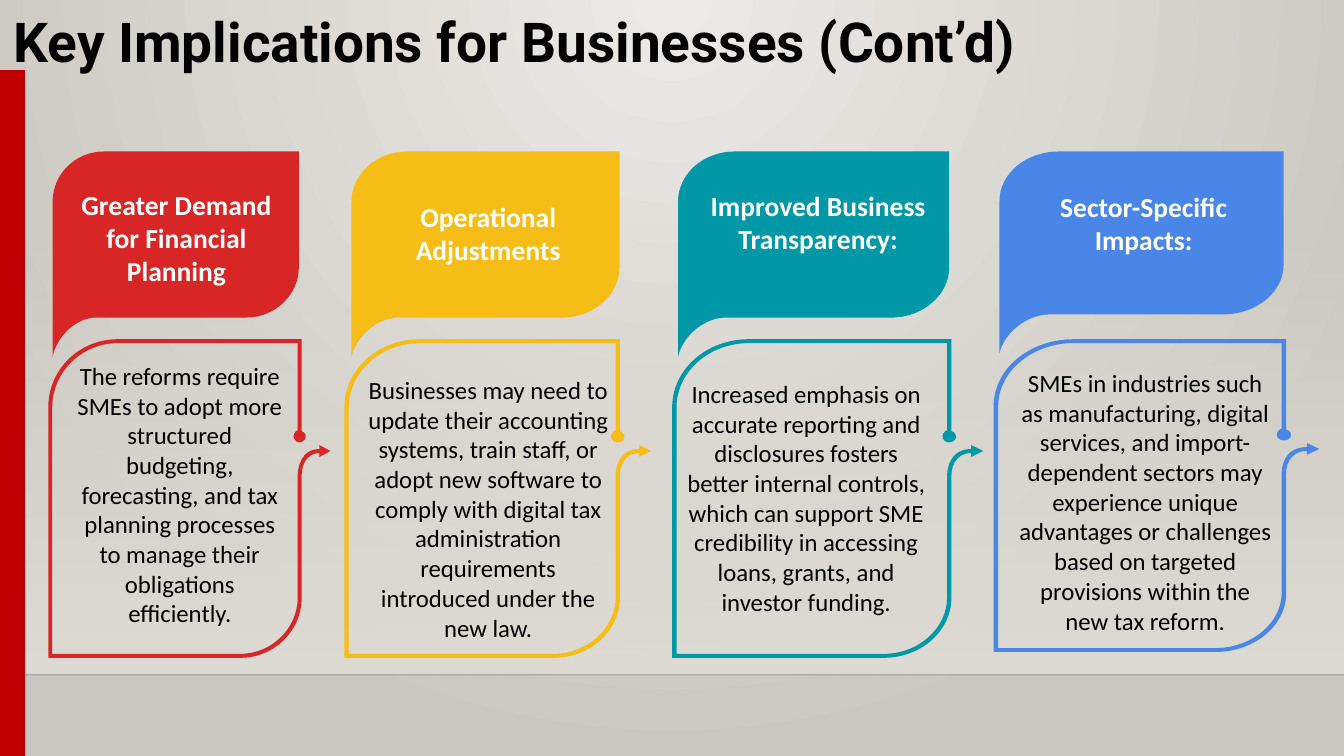
from dataclasses import dataclass
from typing import NamedTuple

from lxml.etree import Element, SubElement
from pptx import Presentation
from pptx.dml.color import RGBColor as Rgb
from pptx.enum.shapes import MSO_CONNECTOR as Connector, MSO_SHAPE as Preset
from pptx.enum.text import MSO_ANCHOR as Anchor, MSO_AUTO_SIZE as AutoSize, PP_ALIGN as Align
from pptx.oxml.ns import qn
from pptx.util import Cm, Pt


@dataclass(frozen=True)
class Theme:
    title_font: str = "Roboto"
    body_font: str = "Calibri"
    title_size: int = 40
    heading_size: int = 20
    body_size: int = 18
    ink: str = "000000"
    white: str = "FFFFFF"
    side_bar: str = "C00000"
    glow: str = "ECEAE7"
    edge: str = "CAC7C1"
    wall: str = "DFDBD5"
    red: str = "D82525"
    yellow: str = "F5BD16"
    teal: str = "0097A7"
    blue: str = "4A86E8"


class Box(NamedTuple):
    """Left, top, width and height in centimetres."""
    left: float
    top: float
    width: float
    height: float

    def lengths(self) -> list[int]:
        return [Cm(value) for value in self]


class TextStyle(NamedTuple):
    font: str
    size: int
    color: str
    bold: bool = False
    align: Align = Align.CENTER


@dataclass(frozen=True)
class Card:
    color: str
    badge: Box
    frame: Box
    heading_box: Box
    heading: str
    body_box: Box
    body: str


class Outline(NamedTuple):
    """Two numbers draw a line to a point, six draw a Bezier curve."""
    width: int
    height: int
    start: tuple[int, int]
    steps: list[tuple[int, ...]]


THEME = Theme()
SLIDE_WIDTH, SLIDE_HEIGHT = 34.49, 19.41
FLOOR_TOP = 17.32
BADGE_TOP, FRAME_TOP = 3.89, 8.71

TITLE = TextStyle(THEME.title_font, THEME.title_size, THEME.ink, True, Align.LEFT)
HEADING = TextStyle(THEME.body_font, THEME.heading_size, THEME.white, True)
BODY = TextStyle(THEME.body_font, THEME.body_size, THEME.ink)

BADGE = Outline(249, 208, (52, 0), [
    (23, 0, 0, 23, 0, 51), (0, 208), (4, 187, 24, 168, 44, 168),
    (196, 168), (225, 168, 249, 145, 249, 117), (249, 0),
])
FRAME = Outline(285, 322, (285, 113), [
    # Arrow and inner edge
    (274, 107), (274, 111), (268, 111, 263, 113, 259, 117),
    (254, 123, 252, 131, 252, 137), (252, 261),
    (252, 292, 226, 318, 194, 318), (4, 318), (4, 69),
    (4, 33, 34, 4, 70, 4), (252, 4), (252, 92),
    # Round end of the line
    (249, 93, 247, 97, 248, 100), (249, 103, 252, 105, 256, 104),
    (259, 103, 261, 100, 260, 97), (259, 95, 258, 93, 256, 93),
    # Outer edge, back to the arrow
    (256, 0), (70, 0), (32, 0, 0, 30, 0, 69), (0, 322), (194, 322),
    (228, 322, 256, 295, 256, 261), (256, 137),
    (256, 133, 257, 125, 262, 120), (265, 117, 269, 115, 274, 115), (274, 119),
])

CARDS = [
    Card(THEME.red, Box(1.35, BADGE_TOP, 6.32, 5.28), Box(1.24, FRAME_TOP, 7.24, 8.18),
         Box(1.37, 4.7, 6.32, 2.82), "Greater Demand for Financial Planning",
         Box(1.63, 9.14, 5.97, 7.19),
         "The reforms require SMEs to adopt more structured budgeting, forecasting, "
         "and tax planning processes to manage their obligations efficiently."),
    Card(THEME.yellow, Box(9.02, BADGE_TOP, 6.88, 5.28), Box(8.84, FRAME_TOP, 7.87, 8.18),
         Box(9.09, 5, 6.88, 1.96), "Operational Adjustments",
         Box(9.14, 9.5, 6.78, 7.19),
         "Businesses may need to update their accounting systems, train staff, or adopt "
         "new software to comply with digital tax administration requirements "
         "introduced under the new law."),
    Card(THEME.teal, Box(17.4, BADGE_TOP, 6.96, 5.28), Box(17.25, FRAME_TOP, 7.98, 8.18),
         Box(17.5, 4.72, 6.99, 1.96), "Improved Business Transparency:",
         Box(17.35, 9.6, 6.68, 6.4),
         "Increased emphasis on accurate reporting and disclosures fosters better "
         "internal controls, which can support SME credibility in accessing loans, "
         "grants, and investor funding."),
    Card(THEME.blue, Box(25.65, BADGE_TOP, 7.29, 5.18), Box(25.5, FRAME_TOP, 8.36, 8.03),
         Box(26.19, 4.75, 6.32, 1.96), "Sector-Specific Impacts:",
         Box(25.86, 9.32, 7.06, 7.19),
         "SMEs in industries such as manufacturing, digital services, and "
         "import-dependent sectors may experience unique advantages or challenges "
         "based on targeted provisions within the new tax reform."),
]


def add_outline(slide, outline: Outline, box: Box, color: str) -> None:
    left, top, width, height = box.lengths()
    scale = (width / outline.width, height / outline.height)
    builder = slide.shapes.build_freeform(*outline.start, scale=scale)
    builder.add_line_segments([step[-2:] for step in outline.steps], close=True)
    shape = builder.convert_to_shape(left, top)
    paint(shape, color)

    # Bend the segments that have control points
    lines = list(shape.element.iter(qn("a:lnTo")))
    for line, step in zip(lines, outline.steps):
        if len(step) == 6:
            curve = Element(qn("a:cubicBezTo"))
            for x, y in zip(step[0::2], step[1::2]):
                SubElement(curve, qn("a:pt"), x=str(x), y=str(y))
            line.getparent().replace(line, curve)


def paint(shape, color: str) -> None:
    shape.shadow.inherit = False
    shape.fill.solid()
    shape.fill.fore_color.rgb = Rgb.from_string(color)
    shape.line.fill.background()


def set_gradient(fill, *colors: str) -> None:
    fill.gradient()
    for stop, color in zip(fill.gradient_stops, colors):
        stop.color.rgb = Rgb.from_string(color)


def set_opacity(element, percent: int) -> None:
    color = next(element.iter(qn("a:srgbClr")))
    SubElement(color, qn("a:alpha"), val=str(percent * 1000))


def add_text(slide, box: Box, text: str, style: TextStyle):
    shape = slide.shapes.add_textbox(*box.lengths())
    frame = shape.text_frame
    frame.word_wrap = True
    paragraph = frame.paragraphs[0]
    paragraph.alignment = style.align
    run = paragraph.add_run()
    run.text = text
    run.font.name = style.font
    run.font.size = Pt(style.size)
    run.font.bold = style.bold
    run.font.color.rgb = Rgb.from_string(style.color)
    return frame


def add_backdrop(slide) -> None:
    # Glow from the top centre
    set_gradient(slide.background.fill, THEME.glow, THEME.edge)
    gradient = next(slide.element.iter(qn("a:gradFill")))
    gradient.remove(gradient.find(qn("a:lin")))
    circle = SubElement(gradient, qn("a:path"), path="circle")
    SubElement(circle, qn("a:fillToRect"), l="43000", t="0", r="43000", b="100000")

    # Wall that fades in towards the floor
    wall_box = Box(0, 5.72, SLIDE_WIDTH, FLOOR_TOP - 5.72)
    wall = slide.shapes.add_shape(Preset.RECTANGLE, *wall_box.lengths())
    paint(wall, THEME.wall)
    set_gradient(wall.fill, THEME.wall, THEME.wall)
    wall.fill.gradient_angle = 270
    set_opacity(wall.element, 0)

    # Floor line
    floor = slide.shapes.add_connector(
        Connector.STRAIGHT, 0, Cm(FLOOR_TOP), Cm(SLIDE_WIDTH), Cm(FLOOR_TOP))
    floor.line.width = Pt(1)
    floor.line.color.rgb = Rgb.from_string(THEME.ink)
    set_opacity(floor.element, 20)
    SubElement(floor.element.spPr, qn("a:effectLst"))

    # Side bar
    bar_box = Box(0, 1.8, 0.64, SLIDE_HEIGHT - 1.8)
    paint(slide.shapes.add_shape(Preset.RECTANGLE, *bar_box.lengths()), THEME.side_bar)


def add_card(slide, card: Card) -> None:
    add_outline(slide, BADGE, card.badge, card.color)
    add_outline(slide, FRAME, card.frame, card.color)
    for box, text, style in ((card.heading_box, card.heading, HEADING),
                             (card.body_box, card.body, BODY)):
        add_text(slide, box, text, style).auto_size = AutoSize.SHAPE_TO_FIT_TEXT


def main() -> None:
    presentation = Presentation()
    presentation.slide_width = Cm(SLIDE_WIDTH)
    presentation.slide_height = Cm(SLIDE_HEIGHT)
    slide = presentation.slides.add_slide(presentation.slide_layouts[6])
    add_backdrop(slide)
    title = add_text(slide, Box(0.1, 0.08, 33.53, 2.16),
                     "Key Implications for Businesses (Cont’d)", TITLE)
    title.vertical_anchor = Anchor.MIDDLE
    title.paragraphs[0].line_spacing = 0.9
    for card in CARDS:
        add_card(slide, card)
    presentation.save("out.pptx")


if __name__ == "__main__":
    main()
